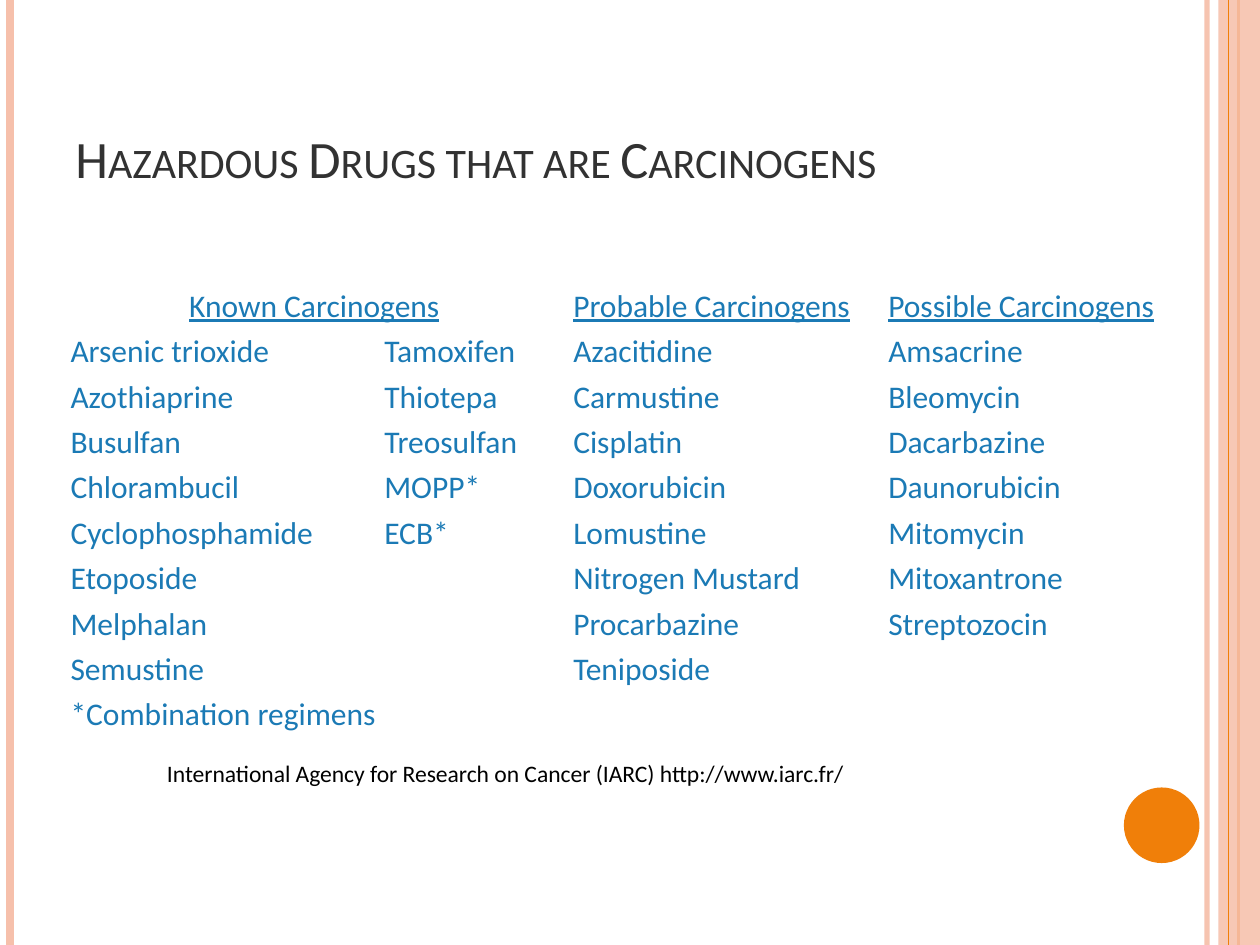
import pptx
import pptx.dml.color
import pptx.enum.shapes
import pptx.enum.text
import pptx.oxml
import pptx.oxml.ns
import pptx.util
from pptx.util import Inches

PEACH, ORANGE, BLUE = "F6C0AB", "F07F09", "1B7AB5"
FONT = "Calibri"
ALIGN = pptx.enum.text.PP_ALIGN
ANCHOR = pptx.enum.text.MSO_ANCHOR
SHAPE = pptx.enum.shapes.MSO_SHAPE

HEADINGS = ["Known Carcinogens", "", "Probable Carcinogens", "Possible Carcinogens"]
DRUG_COLUMNS = [
    ["Arsenic trioxide", "Azothiaprine", "Busulfan", "Chlorambucil",
     "Cyclophosphamide", "Etoposide", "Melphalan", "Semustine",
     "*Combination regimens"],
    ["Tamoxifen", "Thiotepa", "Treosulfan", "MOPP*", "ECB*"],
    ["Azacitidine", "Carmustine", "Cisplatin", "Doxorubicin", "Lomustine",
     "Nitrogen Mustard", "Procarbazine", "Teniposide"],
    ["Amsacrine", "Bleomycin", "Dacarbazine", "Daunorubicin", "Mitomycin",
     "Mitoxantrone", "Streptozocin"],
]
COLUMN_WIDTHS = [2.49, 1.5, 2.5, 2.31]
ROW_HEIGHT = 0.36


def color(hex_text):
    return pptx.dml.color.RGBColor.from_string(hex_text)


def set_alpha(fill, percent):
    """Make a solid fill partly transparent."""
    element = fill._xPr.find(".//" + pptx.oxml.ns.qn("a:srgbClr"))
    alpha = pptx.oxml.parse_xml(
        f'<a:alpha {pptx.oxml.ns.nsdecls("a")} val="{percent * 1000}"/>')
    element.append(alpha)


def format_text(para, size, hex_text, underline=False):
    for span in para.runs:
        span.font.name = FONT
        span.font.size = pptx.util.Pt(size)
        span.font.color.rgb = color(hex_text)
        span.font.underline = underline


def add_stripe(page, x, height, hex_text, width, alpha=100):
    stripe = page.shapes.add_connector(
        pptx.enum.shapes.MSO_CONNECTOR.STRAIGHT,
        Inches(x), 0, Inches(x), Inches(height))
    stripe.line.color.rgb = color(hex_text)
    stripe.line.width = pptx.util.Pt(width)
    set_alpha(stripe.line.fill, alpha)
    stripe._element.spPr.append(pptx.oxml.parse_xml(
        f'<a:effectLst {pptx.oxml.ns.nsdecls("a")}/>'))


def add_plain_shape(page, kind, box, hex_text, alpha=100):
    shape = page.shapes.add_shape(kind, *map(Inches, box))
    shape.shadow.inherit = False
    shape.fill.solid()
    shape.fill.fore_color.rgb = color(hex_text)
    set_alpha(shape.fill, alpha)
    shape.line.fill.background()


def add_frame(page, box):
    """Decorate the two side edges of the box."""
    left, top, width, height = box
    right = left + width
    add_stripe(page, right - 0.42, height, PEACH, 3, 93)
    add_stripe(page, left + 0.08, height, PEACH, 4.5)
    add_stripe(page, right - 0.17, height, ORANGE, 1.5)
    add_plain_shape(page, SHAPE.RECTANGLE, (right - 0.33, top, 0.33, height), PEACH, 87)
    add_stripe(page, right - 0.25, height, ORANGE, 0.75)
    add_plain_shape(page, SHAPE.OVAL, (right - 1.08, top + 6.25, 0.6, 0.6), ORANGE)


def add_text(page, box, text, size, hex_text, anchor=ANCHOR.TOP, align=ALIGN.LEFT):
    frame = page.shapes.add_textbox(*map(Inches, box)).text_frame
    frame.word_wrap = True
    frame.vertical_anchor = anchor
    frame.text = text
    para = frame.paragraphs[0]
    para.alignment = align
    format_text(para, size, hex_text)
    return para


def add_title(page, box):
    para = add_text(page, box, "Hazardous Drugs that are Carcinogens", 30, "323232",
                    anchor=ANCHOR.BOTTOM)
    para.runs[0].font._element.set("cap", "small")


def add_drug_table(page, box):
    row_count = 1 + max(map(len, DRUG_COLUMNS))
    table = page.shapes.add_table(
        row_count, len(DRUG_COLUMNS), *map(Inches, box)).table
    table.first_row = table.horz_banding = False
    for column, width in zip(table.columns, COLUMN_WIDTHS):
        column.width = Inches(width)
    for row in table.rows:
        row.height = Inches(ROW_HEIGHT)

    for column_index, (heading, drugs) in enumerate(zip(HEADINGS, DRUG_COLUMNS)):
        texts = [heading] + drugs
        texts += [""] * (row_count - len(texts))
        for row_index, text in enumerate(texts):
            is_heading = row_index == 0
            cell = table.cell(row_index, column_index)
            cell.fill.background()
            cell.margin_left = cell.margin_right = Inches(0.06)
            cell.margin_top = cell.margin_bottom = Inches(0.03)
            cell.vertical_anchor = ANCHOR.MIDDLE if is_heading else ANCHOR.TOP
            cell.text = text
            format_text(cell.text_frame.paragraphs[0], 18, BLUE, is_heading)

    # The first heading and the footnote span both known-carcinogen columns
    for row_index in (0, row_count - 1):
        table.cell(row_index, 0).merge(table.cell(row_index, 1))
    table.cell(0, 0).text_frame.paragraphs[0].alignment = ALIGN.CENTER


def add_source_line(page, box):
    para = add_text(
        page, box,
        "International Agency for Research on Cancer (IARC) http://www.iarc.fr/",
        13.5, "000000", align=ALIGN.CENTER)
    para.line_spacing = 0.9


def main():
    deck = pptx.Presentation()
    deck.slide_width, deck.slide_height = Inches(10), Inches(7.5)
    page = deck.slides.add_slide(deck.slide_layouts[6])
    add_frame(page, (0, 0, 10, 7.5))
    add_title(page, (0.5, 0.3, 8.17, 1.25))
    add_drug_table(page, (0.5, 2.25, 8.8, 3.6))
    add_source_line(page, (1.04, 6, 5.94, 0.31))
    deck.save("out.pptx")


if __name__ == "__main__":
    main()
